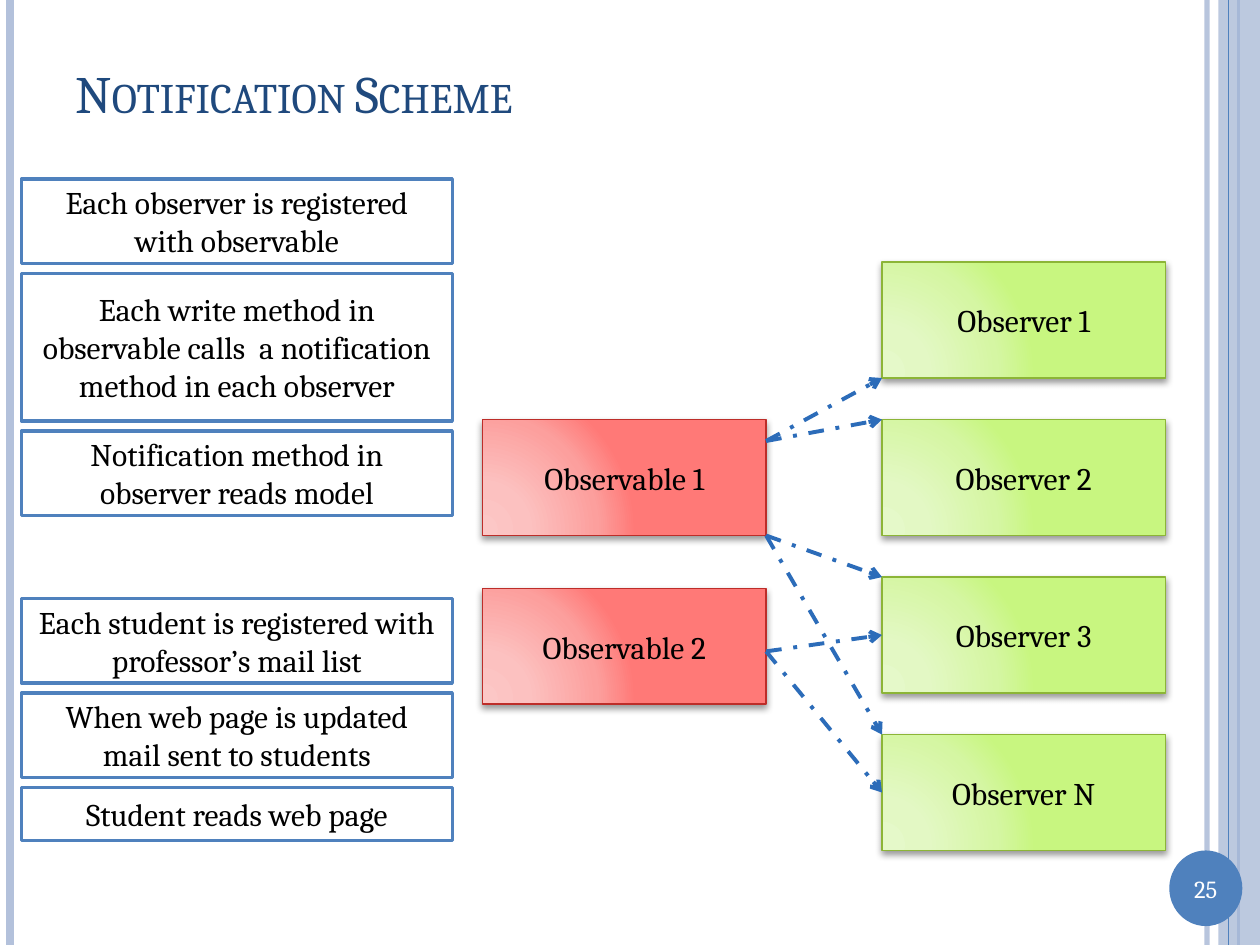
import pptx
import pptx.dml.color
import pptx.enum.dml
import pptx.enum.shapes
import pptx.enum.text
import pptx.oxml
import pptx.oxml.ns
import pptx.util
from lxml import etree

Inches, Pt = pptx.util.Inches, pptx.util.Pt
qn = pptx.oxml.ns.qn
SHAPES = pptx.enum.shapes.MSO_SHAPE
ALIGN = pptx.enum.text.PP_ALIGN
MIDDLE = pptx.enum.text.MSO_ANCHOR.MIDDLE

# Content
TITLE = "Notification Scheme"
SLIDE_NUMBER = "25"
# Each stack: top, then (text, height) from top to bottom
NOTE_STACKS = [
    (1.42, [
        ("Each observer is registered with observable", 0.67),
        ("Each write method in observable calls  a notification method in each observer", 1.17),
        ("Notification method in observer reads model", 0.67),
    ]),
    (4.75, [
        ("Each student is registered with professor’s mail list", 0.67),
        ("When web page is updated mail sent to students", 0.67),
        ("Student reads web page", 0.42),
    ]),
]
OBSERVABLES = [("Observable 1", 3.33), ("Observable 2", 4.67)]
OBSERVERS = ["Observer 1", "Observer 2", "Observer 3", "Observer N"]
# Observable, start below its top, observer, end below its top
BOX_WIDTH, BOX_HEIGHT = 2.25, 0.92
NOTIFICATIONS = [
    ("Observable 1", 0.17, "Observer 1", BOX_HEIGHT),
    ("Observable 1", 0.17, "Observer 2", 0),
    ("Observable 1", BOX_HEIGHT, "Observer 3", 0),
    ("Observable 1", BOX_HEIGHT, "Observer N", 0),
    ("Observable 2", 0.5, "Observer 3", BOX_HEIGHT / 2),
    ("Observable 2", 0.5, "Observer N", BOX_HEIGHT / 2),
]

# Layout
NOTE_LEFT, NOTE_WIDTH, NOTE_GAP = 0.17, 3.42, 0.08
OBSERVABLE_LEFT = 3.83
OBSERVER_LEFT, OBSERVER_TOP, OBSERVER_PITCH = 7, 2.08, 1.25

THEME = {
    "font": "Cambria", "title_size": 30, "body_size": 18, "number_size": 14,
    "title": "1F497D", "text": "000000", "white": "FFFFFF",
    "accent": "4F81BD", "band": "B3C1DB", "arrow": "2C6CB9",
    "observable": {"stops": [(0, "FCC7C6"), (30, "FCC1C0"), (75, "FC9F9D"), (100, "FF7977")],
                   "line": "BD2D29"},
    "observer": {"stops": [(0, "E5F9C9"), (30, "E3F8C4"), (75, "D5F6A3"), (100, "C8F680")],
                 "line": "8CB537"},
}


def rgb(color):
    return pptx.dml.color.RGBColor.from_string(color)


def set_alpha(properties, percent):
    color = properties.find(f"{qn('a:solidFill')}/{qn('a:srgbClr')}")
    etree.SubElement(color, qn("a:alpha"), val=str(percent * 1000))


def write(shape, text, size, color, align):
    frame = shape.text_frame
    frame.word_wrap = True
    frame.vertical_anchor = MIDDLE
    paragraph = frame.paragraphs[0]
    paragraph.alignment = align
    run = paragraph.add_run()
    run.text = text
    run.font.name = THEME["font"]
    run.font.size = Pt(size)
    run.font.color.rgb = rgb(color)
    return run


def add_block(slide, kind, box, fill, line=None, width=1):
    shape = slide.shapes.add_shape(kind, *map(Inches, box))
    shape.shadow.inherit = False
    if fill:
        shape.fill.solid()
        shape.fill.fore_color.rgb = rgb(fill)
    if line:
        shape.line.color.rgb = rgb(line)
        shape.line.width = Pt(width)
    else:
        shape.line.fill.background()
    return shape


def add_line(slide, start, end, color, width):
    line = slide.shapes.add_connector(
        pptx.enum.shapes.MSO_CONNECTOR.STRAIGHT, *map(Inches, start + end))
    line.line.color.rgb = rgb(color)
    line.line.width = Pt(width)
    etree.SubElement(line.element.spPr, qn("a:effectLst"))
    return line


def add_glossy_box(slide, text, left, top, style):
    shape = add_block(slide, SHAPES.RECTANGLE, (left, top, BOX_WIDTH, BOX_HEIGHT),
                      None, style["line"])
    properties = shape.element.spPr
    # Radial gradient from the lower left corner
    gradient = etree.Element(qn("a:gradFill"), rotWithShape="1")
    stops = etree.SubElement(gradient, qn("a:gsLst"))
    for position, color in style["stops"]:
        stop = etree.SubElement(stops, qn("a:gs"), pos=str(position * 1000))
        etree.SubElement(stop, qn("a:srgbClr"), val=color)
    circle = etree.SubElement(gradient, qn("a:path"), path="circle")
    etree.SubElement(circle, qn("a:fillToRect"), l="5000", t="100000", r="120000", b="10000")
    properties.find(qn("a:prstGeom")).addnext(gradient)
    # Soft shadow straight below
    shadow = etree.SubElement(
        properties.find(qn("a:effectLst")), qn("a:outerShdw"), blurRad=str(Pt(4)),
        dist=str(Pt(2)), dir="5400000", rotWithShape="0")
    color = etree.SubElement(shadow, qn("a:srgbClr"), val="000000")
    etree.SubElement(color, qn("a:alpha"), val="40000")
    write(shape, text, THEME["body_size"], THEME["text"], ALIGN.CENTER)
    return shape


def add_frame(slide):
    def vertical(x, color, width):
        return add_line(slide, (x, 0), (x, 7.5), color, width)

    right_band = vertical(9.58, THEME["band"], 3)
    set_alpha(right_band.line._ln, 93)
    vertical(0.08, THEME["band"], 4.5)
    vertical(9.83, THEME["accent"], 1.5)
    strip = add_block(slide, SHAPES.RECTANGLE, (9.67, 0, 0.33, 7.5), THEME["band"])
    set_alpha(strip.element.spPr, 87)
    vertical(9.75, THEME["accent"], 0.75)
    add_block(slide, SHAPES.OVAL, (9.28, 6.75, 0.58, 0.6), THEME["accent"])
    number = slide.shapes.add_textbox(*map(Inches, (9.28, 6.88, 0.58, 0.34)))
    write(number, SLIDE_NUMBER, THEME["number_size"], THEME["white"], ALIGN.CENTER)


def add_notes_column(slide):
    for top, notes in NOTE_STACKS:
        for text, height in notes:
            note = add_block(slide, SHAPES.RECTANGLE, (NOTE_LEFT, top, NOTE_WIDTH, height),
                             THEME["white"], THEME["accent"], 2)
            write(note, text, THEME["body_size"], THEME["text"], ALIGN.CENTER)
            top += height + NOTE_GAP


def add_diagram(slide):
    tops = dict(OBSERVABLES)
    boxes = {}
    for text, top in OBSERVABLES:
        boxes[text] = add_glossy_box(slide, text, OBSERVABLE_LEFT, top, THEME["observable"])
    for index, text in enumerate(OBSERVERS):
        tops[text] = OBSERVER_TOP + index * OBSERVER_PITCH
        boxes[text] = add_glossy_box(slide, text, OBSERVER_LEFT, tops[text], THEME["observer"])

    for source, start, target, end in NOTIFICATIONS:
        arrow = add_line(slide, (OBSERVABLE_LEFT + BOX_WIDTH, tops[source] + start),
                         (OBSERVER_LEFT, tops[target] + end), THEME["arrow"], 2.25)
        arrow.line.dash_style = pptx.enum.dml.MSO_LINE.DASH_DOT
        etree.SubElement(arrow.line._ln, qn("a:tailEnd"), type="arrow")
        if end == BOX_HEIGHT / 2:
            arrow.end_connect(boxes[target], 1)


def main():
    presentation = pptx.Presentation()
    presentation.slide_width, presentation.slide_height = Inches(10), Inches(7.5)
    slide = presentation.slides.add_slide(presentation.slide_layouts[5])

    # Title
    title = slide.shapes.title
    title.left, title.top, title.width, title.height = map(Inches, (0.5, 0.3, 8.67, 0.87))
    run = write(title, TITLE, THEME["title_size"], THEME["title"], ALIGN.LEFT)
    run.font._element.set("cap", "small")

    add_frame(slide)
    add_diagram(slide)
    add_notes_column(slide)
    presentation.save("out.pptx")


if __name__ == "__main__":
    main()
